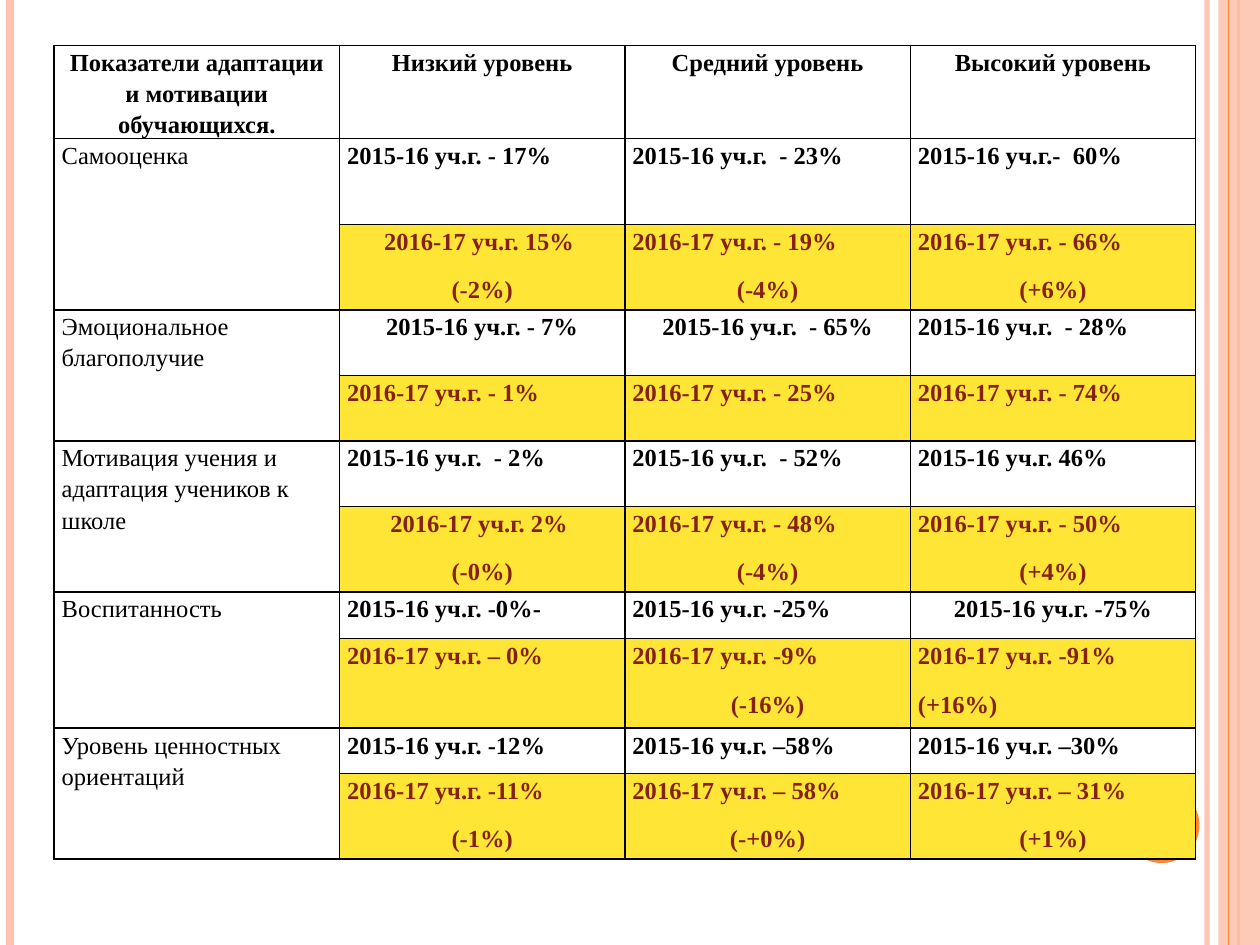
from lxml.etree import SubElement
from pptx import Presentation
from pptx.dml.color import RGBColor
from pptx.enum.shapes import MSO_CONNECTOR, MSO_SHAPE
from pptx.enum.text import PP_ALIGN
from pptx.oxml.ns import qn
from pptx.util import Inches, Pt

BLACK = RGBColor(0x00, 0x00, 0x00)
MAROON = RGBColor(0x86, 0x21, 0x10)
YELLOW = RGBColor(0xFF, 0xE6, 0x36)
ORANGE = RGBColor(0xFE, 0x86, 0x37)
PEACH = RGBColor(0xFE, 0xC3, 0xAE)

FONT = "Times New Roman"
COLUMN_WIDTH = 2.265
ROW_HEIGHTS = [0.74, 0.68, 0.68, 0.52, 0.52, 0.52, 0.68, 0.37, 0.71, 0.36, 0.68]

HEADINGS = ["Показатели адаптации и мотивации обучающихся.",
            "Низкий уровень", "Средний уровень", "Высокий уровень"]

# Each indicator: name, levels in 2015-16, levels in 2016-17
INDICATORS = [
    ("Самооценка",
     ["2015-16 уч.г. - 17%", "2015-16 уч.г.  - 23%", "2015-16 уч.г.-  60%"],
     ["2016-17 уч.г. 15% \n(-2%)", "2016-17 уч.г. - 19%\n(-4%)",
      "2016-17 уч.г. - 66%\n(+6%)"]),
    ("Эмоциональное благополучие",
     ["2015-16 уч.г. - 7%", "2015-16 уч.г.  - 65%", "2015-16 уч.г.  - 28%"],
     ["2016-17 уч.г. - 1%", "2016-17 уч.г. - 25%", "2016-17 уч.г. - 74%"]),
    ("Мотивация учения и адаптация учеников к школе",
     ["2015-16 уч.г.  - 2%", "2015-16 уч.г.  - 52%", "2015-16 уч.г. 46%"],
     ["2016-17 уч.г. 2% \n(-0%)", "2016-17 уч.г. - 48%\n(-4%)",
      "2016-17 уч.г. - 50%\n(+4%)"]),
    ("Воспитанность",
     ["2015-16 уч.г. -0%-", "2015-16 уч.г. -25%", "2015-16 уч.г. -75%"],
     ["2016-17 уч.г. – 0%", "2016-17 уч.г. -9%\n(-16%)",
      "2016-17 уч.г. -91%\n(+16%)"]),
    ("Уровень ценностных ориентаций",
     ["2015-16 уч.г. -12%", "2015-16 уч.г. –58%", "2015-16 уч.г. –30%"],
     ["2016-17 уч.г. -11%\n(-1%)", "2016-17 уч.г. – 58%\n(-+0%)",
      "2016-17 уч.г. – 31%\n(+1%)"]),
]

# Level cells (row, column) that depart from "level left, change centred"
CENTRED_LEVELS = {(2, 1), (3, 1), (3, 2), (6, 1), (7, 3)}
LEFT_CHANGES = {(8, 3)}


def set_opacity(color_parent, percent):
    color = next(color_parent.iter(qn("a:srgbClr")))
    SubElement(color, qn("a:alpha"), val=str(percent * 1000))


def add_stripe(slide, x, color, width, opacity=100):
    """Draw a vertical line over the full slide height."""
    stripe = slide.shapes.add_connector(
        MSO_CONNECTOR.STRAIGHT, Inches(x), 0, Inches(x), Inches(7.5))
    stripe.line.color.rgb = color
    stripe.line.width = Pt(width)
    properties = stripe._element.spPr
    if opacity < 100:
        set_opacity(properties, opacity)
    SubElement(properties, qn("a:effectLst"))


def add_plain_shape(slide, kind, left, top, width, height, color, opacity=100):
    shape = slide.shapes.add_shape(
        kind, Inches(left), Inches(top), Inches(width), Inches(height))
    shape.shadow.inherit = False
    shape.fill.solid()
    shape.fill.fore_color.rgb = color
    shape.line.fill.background()
    if opacity < 100:
        set_opacity(shape._element.spPr, opacity)


def write_text(frame, text, color=BLACK, bold=True, aligns=(PP_ALIGN.LEFT,)):
    """Write one paragraph per line of text, each with its own alignment."""
    for index, (line, align) in enumerate(zip(text.split("\n"), aligns)):
        paragraph = frame.add_paragraph() if index else frame.paragraphs[0]
        paragraph.alignment = align
        paragraph.line_spacing = 1.15
        paragraph.space_after = Pt(10)
        run = paragraph.add_run()
        run.text = line
        run.font.name = FONT
        run.font.size = Pt(14)
        run.font.bold = bold
        run.font.color.rgb = color


def format_cell(cell, fill=None):
    cell.margin_left = cell.margin_right = Inches(0.06)
    cell.margin_top = cell.margin_bottom = 0
    properties = cell._tc.get_or_add_tcPr()
    for side in ("lnL", "lnR", "lnT", "lnB"):
        border = SubElement(properties, qn(f"a:{side}"), w=str(Pt(1)))
        border_fill = SubElement(border, qn("a:solidFill"))
        SubElement(border_fill, qn("a:srgbClr"), val=str(BLACK))
    if fill is None:
        cell.fill.background()
    else:
        cell.fill.solid()
        cell.fill.fore_color.rgb = fill


def fill_levels(table, row, levels, color, fill=None):
    for column, level in enumerate(levels, start=1):
        position = (row, column)
        cell = table.cell(row, column)
        format_cell(cell, fill)
        first = PP_ALIGN.CENTER if position in CENTRED_LEVELS else PP_ALIGN.LEFT
        second = PP_ALIGN.LEFT if position in LEFT_CHANGES else PP_ALIGN.CENTER
        write_text(cell.text_frame, level, color=color, aligns=(first, second))


def add_indicator_table(slide):
    table = slide.shapes.add_table(
        len(ROW_HEIGHTS), len(HEADINGS), Inches(0.43), Inches(0.36),
        Inches(COLUMN_WIDTH * len(HEADINGS)), Inches(sum(ROW_HEIGHTS))).table
    table.horz_banding = False
    table.first_row = False
    for column in table.columns:
        column.width = Inches(COLUMN_WIDTH)
    for row, height in zip(table.rows, ROW_HEIGHTS):
        row.height = Inches(height)

    for column, heading in enumerate(HEADINGS):
        cell = table.cell(0, column)
        format_cell(cell)
        write_text(cell.text_frame, heading, aligns=(PP_ALIGN.CENTER,))

    for index, (name, earlier, later) in enumerate(INDICATORS):
        row = 1 + 2 * index
        name_cell, spanned_cell = table.cell(row, 0), table.cell(row + 1, 0)
        name_cell.merge(spanned_cell)
        format_cell(name_cell)
        format_cell(spanned_cell)
        write_text(name_cell.text_frame, name, bold=False)
        fill_levels(table, row, earlier, BLACK)
        fill_levels(table, row + 1, later, MAROON, YELLOW)


def add_decoration(slide):
    add_stripe(slide, 9.58, PEACH, 3, opacity=93)
    add_stripe(slide, 0.08, PEACH, 4.5)
    add_stripe(slide, 9.83, ORANGE, 1.5)
    add_plain_shape(slide, MSO_SHAPE.RECTANGLE, 9.67, 0, 0.33, 7.5, PEACH, opacity=87)
    add_stripe(slide, 9.75, ORANGE, 0.75)
    add_plain_shape(slide, MSO_SHAPE.OVAL, 8.92, 6.25, 0.6, 0.6, ORANGE)


def main():
    presentation = Presentation()
    presentation.slide_width = Inches(10)
    presentation.slide_height = Inches(7.5)
    slide = presentation.slides.add_slide(presentation.slide_layouts[6])
    add_decoration(slide)
    add_indicator_table(slide)
    presentation.save("out.pptx")


if __name__ == "__main__":
    main()
